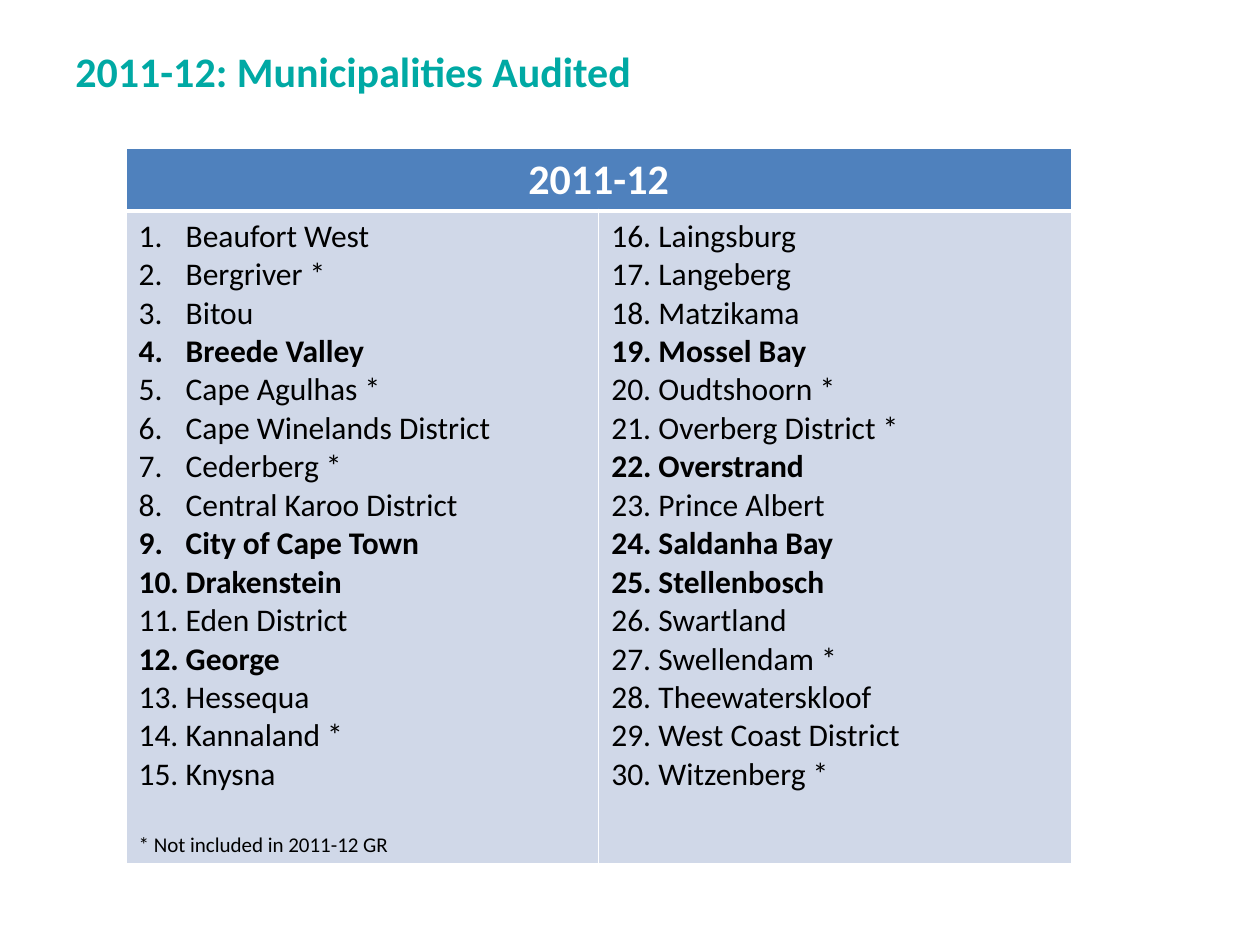
from lxml import etree
from pptx import Presentation
from pptx.dml.color import RGBColor
from pptx.enum.text import MSO_ANCHOR, PP_ALIGN
from pptx.oxml.ns import qn
from pptx.util import Cm, Pt

CENTER, LEFT = PP_ALIGN.CENTER, PP_ALIGN.LEFT
MIDDLE = MSO_ANCHOR.MIDDLE

TITLE = "2011-12: Municipalities Audited"
HEADER = "2011-12"
FOOTNOTE = "* Not included in 2011-12 GR"
COLUMNS = [
    ["Beaufort West", "Bergriver *", "Bitou", "Breede Valley", "Cape Agulhas *",
     "Cape Winelands District", "Cederberg *", "Central Karoo District",
     "City of Cape Town", "Drakenstein", "Eden District", "George", "Hessequa",
     "Kannaland *", "Knysna"],
    ["Laingsburg", "Langeberg", "Matzikama", "Mossel Bay", "Oudtshoorn *",
     "Overberg District *", "Overstrand", "Prince Albert", "Saldanha Bay",
     "Stellenbosch", "Swartland", "Swellendam *", "Theewaterskloof",
     "West Coast District", "Witzenberg *"],
]
BOLD = {"Breede Valley", "City of Cape Town", "Drakenstein", "George",
        "Mossel Bay", "Overstrand", "Saldanha Bay", "Stellenbosch"}
COLORS = {"title": "00A9A4", "header": "4F81BD", "body": "D0D8E8",
          "white": "FFFFFF", "black": "000000"}
FONT = "Calibri"
INDENT = Cm(0.95)
ROW_HEIGHTS = [Cm(1.27), Cm(13.16)]
COLUMN_WIDTH = Cm(9.53)


def add_text(tf, text, size=18, color="black", bold=False, align=LEFT,
             before=0, start=None):
    """Append a paragraph; start is the first number of its numbered list."""
    p = tf.paragraphs[0] if not tf.text else tf.add_paragraph()
    if start:
        pPr = p._p.get_or_add_pPr()
        pPr.set("marL", str(INDENT))
        pPr.set("indent", str(-INDENT))
        etree.SubElement(pPr, qn("a:buFont"), typeface="+mj-lt")
        etree.SubElement(pPr, qn("a:buAutoNum"), type="arabicPeriod",
                         startAt=str(start))
    p.alignment = align
    if before:
        p.space_before = Pt(before)
    r = p.add_run()
    r.text = text
    r.font.name, r.font.size, r.font.bold = FONT, Pt(size), bold
    r.font.color.rgb = RGBColor.from_string(COLORS[color])


def style_cell(cell, fill, top=1, bottom=1):
    cell.fill.solid()
    cell.fill.fore_color.rgb = RGBColor.from_string(COLORS[fill])
    tcPr = cell._tc.get_or_add_tcPr()
    widths = {"a:lnL": 1, "a:lnR": 1, "a:lnT": top, "a:lnB": bottom}
    for i, (tag, width) in enumerate(widths.items()):
        ln = etree.Element(qn(tag), w=str(Pt(width)))
        solid = etree.SubElement(ln, qn("a:solidFill"))
        etree.SubElement(solid, qn("a:srgbClr"), val=COLORS["white"])
        tcPr.insert(i, ln)


prs = Presentation()
prs.slide_width, prs.slide_height = Cm(25.4), Cm(19.05)
s = prs.slides.add_slide(prs.slide_layouts[6])

tf = s.shapes.add_textbox(Cm(1.27), Cm(0.76), Cm(22.43), Cm(1.35)).text_frame
tf.word_wrap = True
tf.vertical_anchor = MIDDLE
add_text(tf, TITLE, size=24, color="title", bold=True)

table = s.shapes.add_table(2, len(COLUMNS), Cm(2.54), Cm(2.98),
                           COLUMN_WIDTH * len(COLUMNS), sum(ROW_HEIGHTS)).table
for row, height in zip(table.rows, ROW_HEIGHTS):
    row.height = height

header = table.cell(0, 0)
header.merge(table.cell(0, len(COLUMNS) - 1))
add_text(header.text_frame, HEADER, size=24, color="white", bold=True, align=CENTER)

start = 1
for c, names in enumerate(COLUMNS):
    table.columns[c].width = COLUMN_WIDTH
    style_cell(table.cell(0, c), "header", bottom=3)
    body = table.cell(1, c)
    style_cell(body, "body", top=3)
    for name in names:
        add_text(body.text_frame, name, bold=name in BOLD, start=start)
    start += len(names)
add_text(table.cell(1, 0).text_frame, FOOTNOTE, size=12, before=22)

prs.save("out.pptx")
